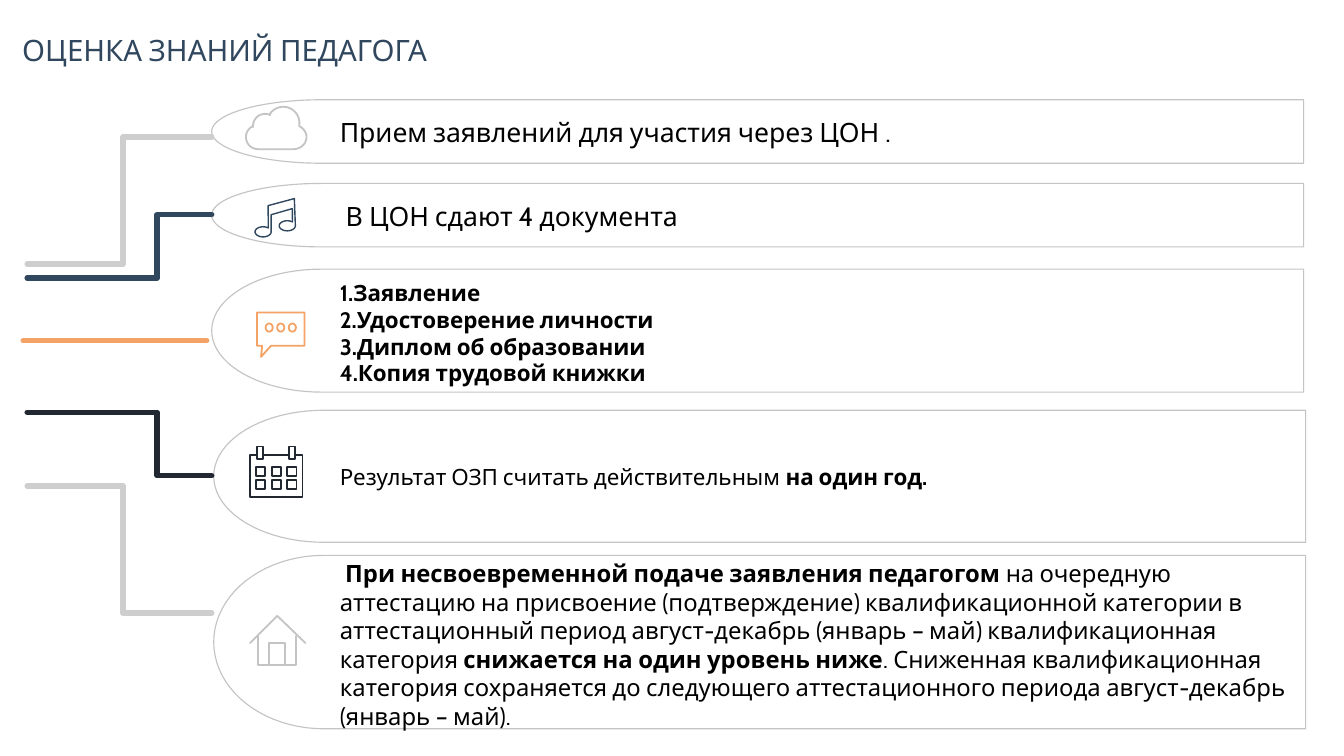
import math
from dataclasses import dataclass

import pptx
import pptx.dml.color
import pptx.enum.text
import pptx.oxml.ns
import pptx.util
from pptx.util import Inches


@dataclass(frozen=True)
class Theme:
    font: str = "Cabin"
    white: str = "FFFFFF"
    black: str = "000000"
    gray: str = "C4C4C4"
    pale: str = "CECECE"
    navy: str = "30475E"
    orange: str = "F2A365"
    dark: str = "222831"
    title: float = 21
    lead: float = 19
    note: float = 17
    body: float = 16
    edge: float = 0.81
    icon: float = 1.3
    track: float = 3.9


theme = Theme()
rgb = pptx.dml.color.RGBColor.from_string
deck = pptx.Presentation()
deck.slide_width, deck.slide_height = Inches(13.33), Inches(7.5)
slide = deck.slides.add_slide(deck.slide_layouts[5])


def arc(x, y, rx, ry, start, end):
    """Points of an elliptic arc; degrees run clockwise from the right."""
    turns = [math.radians(start + (end - start) * i / 40) for i in range(41)]
    return [(x + rx * math.cos(t), y + ry * math.sin(t)) for t in turns]


def draw(points, color, width, closed=True, fill=None):
    """Outline through points given in inches, with round ends."""
    spots = [(Inches(x), Inches(y)) for x, y in points]
    pen = slide.shapes.build_freeform(*spots[0], scale=1.0)
    pen.add_line_segments(spots[1:], close=closed)
    shape = pen.convert_to_shape()
    shape.shadow.inherit = False
    if fill:
        shape.fill.solid()
        shape.fill.fore_color.rgb = rgb(fill)
    else:
        shape.fill.background()
    shape.line.color.rgb = rgb(color)
    shape.line.width = pptx.util.Pt(width)
    shape.element.spPr.find(pptx.oxml.ns.qn("a:ln")).set("cap", "rnd")


# Panels: left, top, height
panels = [
    (2.1, 0.99, 0.63),
    (2.1, 1.82, 0.63),
    (2.1, 2.67, 1.22),
    (2.12, 4.07, 1.31),
    (2.12, 5.51, 1.72),
]
for left, top, high in panels:
    curve = arc(left + 1.09, top + high / 2, 1.09, high / 2, 270, 90)
    right = left + 10.83
    draw(curve + [(right, top + high), (right, top)],
         theme.gray, theme.edge, fill=theme.white)

# Tracks: bend, start height, end height, colour
tracks = [
    (1.22, 2.62, 1.36, theme.pale),
    (1.56, 2.76, 2.13, theme.navy),
    (1.22, 4.82, 6.08, theme.pale),
    (1.56, 4.09, 4.72, theme.dark),
]
for bend, start, end, color in tracks:
    draw([(0.27, start), (bend, start), (bend, end), (2.1, end)],
         color, theme.track, closed=False)
draw([(0.23, 3.38), (2.05, 3.38)], theme.orange, theme.track, closed=False)

# Cloud
cloud = (arc(2.91, 1.36, 0.13, 0.12, 90, -60)
         + arc(2.81, 1.22, 0.16, 0.16, 10, -150)
         + arc(2.63, 1.25, 0.12, 0.12, -65, -185)
         + arc(2.56, 1.36, 0.12, 0.12, -115, -270))
draw(cloud, theme.gray, theme.icon)

# Music
music = (arc(2.61, 2.3, 0.08, 0.05, 0, 310)
         + [(2.66, 2.04), (2.92, 1.97)]
         + arc(2.85, 2.24, 0.08, 0.05, 0, 310)
         + [(2.9, 2.07), (2.69, 2.13)])
draw(music, theme.navy, 1)

# Speech
draw([(2.55, 3.1), (3.02, 3.1), (3.02, 3.43), (2.69, 3.43),
      (2.59, 3.54), (2.6, 3.43), (2.55, 3.43)], theme.orange, theme.icon)
for i in range(3):
    draw(arc(2.67 + 0.115 * i, 3.25, 0.035, 0.04, 0, 360), theme.orange, theme.icon)

# Calendar: left, top, width, height
boxes = [(2.48, 4.51, 0.52, 0.42)]
boxes += [(x, 4.43, 0.06, 0.12) for x in (2.55, 2.87)]
boxes += [(2.54 + 0.155 * col, 4.63 + 0.135 * row, 0.09, 0.09)
          for row in range(2) for col in range(3)]
for x, y, w, h in boxes:
    draw([(x, y), (x + w, y), (x + w, y + h), (x, y + h)],
         theme.dark, theme.icon, fill=theme.white)

# House: walls, roof, door
house = [
    [(2.56, 6.31), (2.56, 6.6), (2.94, 6.6), (2.94, 6.31)],
    [(2.48, 6.38), (2.75, 6.11), (3.03, 6.38)],
    [(2.67, 6.6), (2.67, 6.38), (2.83, 6.38), (2.83, 6.6)],
]
for points in house:
    draw(points, theme.gray, theme.icon, closed=False)

# Texts: box, size, colour, paragraphs of (words, bold) runs
papers = ["1.Заявление", "2.Удостоверение личности",
          "3.Диплом об образовании", "4.Копия трудовой книжки"]
texts = [
    ((0.09, 0.14, 7.85, 0.7), theme.title, theme.navy,
     [[("ОЦЕНКА ЗНАНИЙ ПЕДАГОГА", False)]]),
    ((3.24, 0.97, 9.69, 0.68), theme.lead, theme.black,
     [[("Прием заявлений для участия через ЦОН .", False)]]),
    ((3.24, 1.8, 9.69, 0.68), theme.lead, theme.black,
     [[(" В ЦОН сдают 4 документа", False)]]),
    ((3.24, 2.71, 9.69, 1.18), theme.body, theme.black,
     [[(paper, True)] for paper in papers]),
    ((3.24, 4.12, 9.71, 1.22), theme.body, theme.black,
     [[("Результат ОЗП считать действительным ", False),
       ("на один год.", True)]]),
    ((3.24, 5.66, 9.69, 1.47), theme.note, theme.black,
     [[(" ", False),
       ("При несвоевременной подаче заявления педагогом ", True),
       ("на очередную аттестацию на присвоение (подтверждение) "
        "квалификационной категории в аттестационный период "
        "август-декабрь (январь – май) квалификационная категория ", False),
       ("снижается на один уровень ниже", True),
       (". Сниженная квалификационная категория сохраняется до следующего "
        "аттестационного периода август-декабрь (январь – май).", False)]]),
]
for i, (box, size, color, paras) in enumerate(texts):
    place = [Inches(v) for v in box]
    if i == 0:
        shape = slide.shapes.title
        shape.left, shape.top, shape.width, shape.height = place
    else:
        shape = slide.shapes.add_textbox(*place)
    frame = shape.text_frame
    frame.word_wrap = True
    frame.auto_size = pptx.enum.text.MSO_AUTO_SIZE.NONE
    frame.vertical_anchor = pptx.enum.text.MSO_ANCHOR.MIDDLE
    frame.margin_left = frame.margin_right = Inches(0.13)
    frame.margin_top = frame.margin_bottom = Inches(0.13)
    for n, runs in enumerate(paras):
        para = frame.add_paragraph() if n else frame.paragraphs[0]
        para.alignment = pptx.enum.text.PP_ALIGN.LEFT
        for words, bold in runs:
            run = para.add_run()
            run.text = words
            run.font.name = theme.font
            run.font.size = pptx.util.Pt(size)
            run.font.bold = bold
            run.font.color.rgb = rgb(color)

deck.save("out.pptx")
